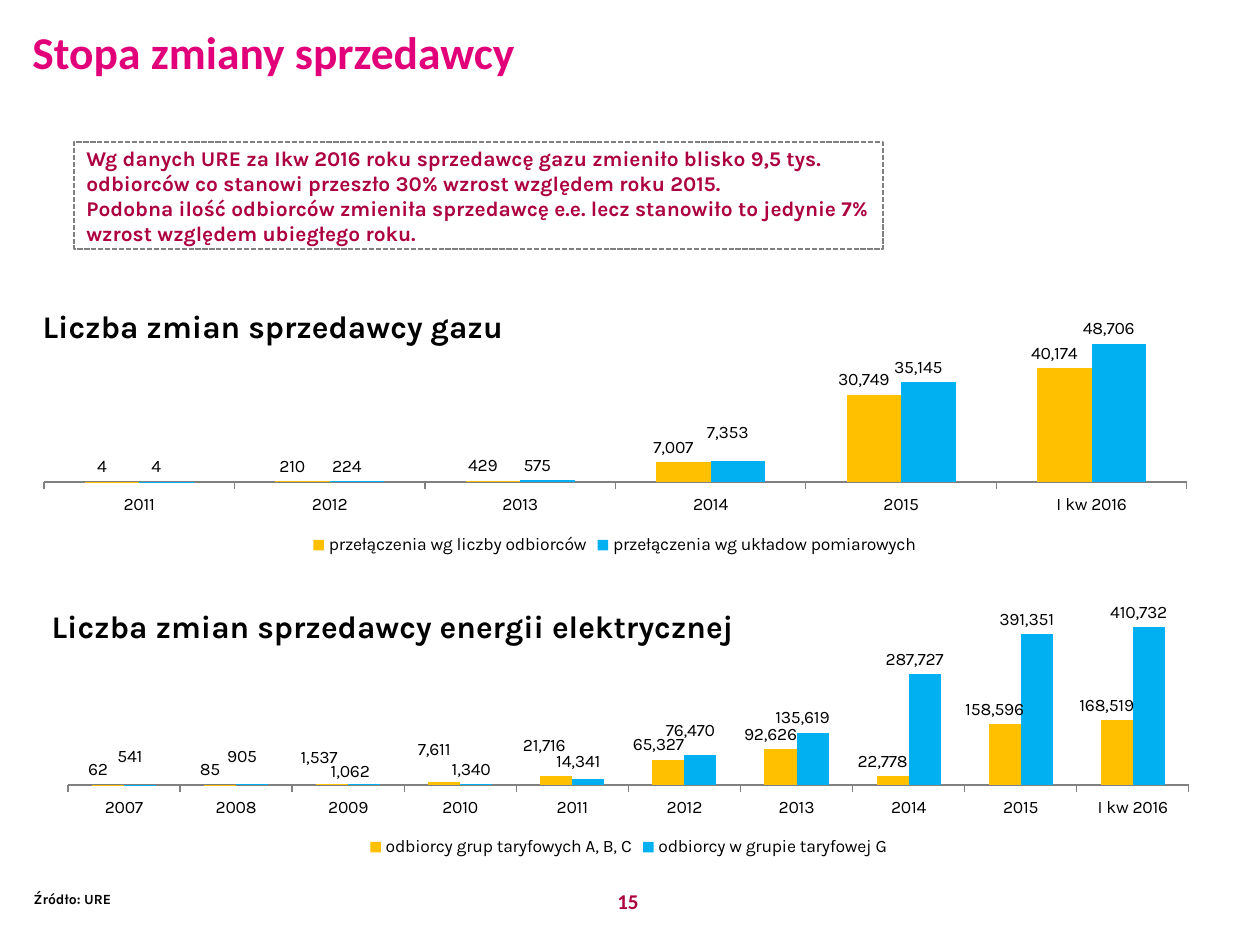
from copy import deepcopy

from lxml import etree
from pptx import Presentation
from pptx.chart.data import CategoryChartData
from pptx.dml.color import RGBColor
from pptx.enum.chart import (XL_CHART_TYPE, XL_LABEL_POSITION,
                             XL_LEGEND_POSITION, XL_TICK_MARK)
from pptx.enum.dml import MSO_LINE
from pptx.enum.shapes import MSO_SHAPE
from pptx.enum.text import MSO_ANCHOR, PP_ALIGN
from pptx.oxml.ns import qn
from pptx.util import Pt

COLUMNS = XL_CHART_TYPE.COLUMN_CLUSTERED
OUT_END = XL_LABEL_POSITION.OUTSIDE_END
BOTTOM = XL_LEGEND_POSITION.BOTTOM
TICK_OUT, TICK_NONE = XL_TICK_MARK.OUTSIDE, XL_TICK_MARK.NONE
DASH = MSO_LINE.SQUARE_DOT
RECT, ROUND = MSO_SHAPE.RECTANGLE, MSO_SHAPE.ROUNDED_RECTANGLE
MIDDLE = MSO_ANCHOR.MIDDLE
LEFT, CENTER = PP_ALIGN.LEFT, PP_ALIGN.CENTER
SCALE = 914400 / 126
NUMBER = (r'_-* #,##0\ _z_ł_-;\-* #,##0\ _z_ł_-;'
          r'_-* "-"??\ _z_ł_-;_-@_-')


class Theme:
    pink = RGBColor(0xE2, 0x00, 0x7A)
    wine = RGBColor(0xAD, 0x00, 0x40)
    black = RGBColor(0, 0, 0)
    gray = RGBColor(0x80, 0x80, 0x80)
    bars = RGBColor(0xFF, 0xC0, 0x00), RGBColor(0x00, 0xB0, 0xF0)
    head, body = "Calibri", "Karla"
    title, chart, note, label, small = 26, 18, 12, 10, 8


GAS = {
    "title": "Liczba zmian sprzedawcy gazu",
    "cats": ["2011", "2012", "2013", "2014", "2015", "I kw 2016"],
    "series": [
        ("przełączenia wg liczby odbiorców",
         [4, 210, 429, 7007, 30749, 40174]),
        ("przełączenia wg układow pomiarowych",
         [4, 224, 575, 7353, 35145, 48706])],
    "top": 50000,
    "plot": (24, 103, 1143, 142),
    "head": (17, 63),
    "shifts": [{}, {3: (0, -14)}],
}
POWER = {
    "title": "Liczba zmian sprzedawcy energii elektrycznej",
    "cats": [str(year) for year in range(2007, 2016)] + ["I kw 2016"],
    "series": [
        ("odbiorcy grup taryfowych A, B, C",
         [62, 85, 1537, 7611, 21716, 65327, 92626, 22778, 158596, 168519]),
        ("odbiorcy w grupie taryfowej G",
         [541, 905, 1062, 1340, 14341, 76470, 135619, 287727, 391351,
          410732])],
    "top": 450000,
    "plot": (23, 75, 1121, 173),
    "head": (1, 63),
    "shifts": [{2: (-3, -12), 3: (0, -18), 4: (-2, -16)},
               {0: (0, -13), 1: (0, -13), 2: (-4, 2), 3: (5, 0),
                4: (0, -3), 5: (0, -10)}],
}


def px(*sizes):
    return [round(size * SCALE) for size in sizes]


def style(font, face, size, color, bold=False):
    font.name, font.size, font.bold = face, Pt(size), bold
    font.color.rgb = color


def write(shape, lines, face, size, color, bold=True, align=LEFT):
    frame = shape.text_frame
    frame.word_wrap, frame.vertical_anchor = True, MIDDLE
    for i, line in enumerate(lines):
        para = frame.paragraphs[0] if i == 0 else frame.add_paragraph()
        para.alignment = align
        run = para.add_run()
        run.text = line
        style(run.font, face, size, color, bold)


def label(slide, box, text, face, size, color, align=LEFT):
    shape = slide.shapes.add_textbox(*px(*box))
    write(shape, [text], face, size, color, align=align)


def panel(slide, box, kind, lines, size, color, dashed=False):
    shape = slide.shapes.add_shape(kind, *px(*box))
    shape.shadow.inherit = False
    shape.fill.background()
    if dashed:
        shape.line.color.rgb = Theme.gray
        shape.line.width, shape.line.dash_style = Pt(1), DASH
    else:
        shape.line.fill.background()
    write(shape, lines, Theme.body, size, color)


def layout(box, spot, edge=True, inner=False):
    """Return a c:layout whose px values are shares of the chart box."""
    node = etree.Element(qn("c:layout"))
    manual = etree.SubElement(node, qn("c:manualLayout"))
    parts = [("layoutTarget", "inner")] if inner else []
    if edge:
        parts += [("xMode", "edge"), ("yMode", "edge")]
    sides = (box[2], box[3]) * 2
    parts += [(key, str(round(val / side, 4)))
              for key, val, side in zip("xywh", spot, sides)]
    for key, val in parts:
        etree.SubElement(manual, qn("c:" + key)).set("val", val)
    return node


def place(parent, node, index):
    """Put the layout in at index, in place of any earlier one."""
    for old in parent.findall(qn("c:layout")):
        parent.remove(old)
    parent.insert(index, node)


def dress(series, color, shifts, box):
    """Colour one series and label it, moving the crowded labels."""
    series.format.fill.solid()
    series.format.fill.fore_color.rgb = color
    series.invert_if_negative = False
    marks = series.data_labels
    marks.show_value, marks.position = True, OUT_END
    marks.number_format, marks.number_format_is_linked = NUMBER, False
    style(marks.font, Theme.body, Theme.label, Theme.black)
    for leader in marks._element.findall(qn("c:showLeaderLines")):
        leader.set("val", "0")
    form = marks._element.find(qn("c:numFmt"))
    for i, shift in shifts.items():
        mark = series.points[i].data_label
        style(mark.font, Theme.body, Theme.label, Theme.black)
        mark.position = OUT_END
        node = marks._element.findall(qn("c:dLbl"))[-1]
        place(node, layout(box, shift, edge=False), 1)
        node.insert(2, deepcopy(form))


def columns(slide, box, info):
    data = CategoryChartData(number_format=NUMBER)
    data.categories = info["cats"]
    for name, vals in info["series"]:
        data.add_series(name, vals)
    chart = slide.shapes.add_chart(COLUMNS, *px(*box), data).chart
    style(chart.font, Theme.body, Theme.label, Theme.black)

    chart.has_title = True
    run = chart.chart_title.text_frame.paragraphs[0].add_run()
    run.text = info["title"]
    style(run.font, Theme.body, Theme.chart, Theme.black, True)
    title = chart.chart_title._element
    place(title, layout(box, info["head"]), 1)
    title.find(qn("c:overlay")).set("val", "1")

    chart.has_legend = True
    chart.legend.position = BOTTOM
    chart.legend.include_in_layout = False

    axis = chart.value_axis
    axis.minimum_scale, axis.maximum_scale = 0, info["top"]
    axis.has_major_gridlines = axis.visible = False
    axis = chart.category_axis
    axis.major_tick_mark, axis.minor_tick_mark = TICK_OUT, TICK_NONE
    axis.format.line.color.rgb = Theme.gray

    plot = chart.plots[0]
    plot.gap_width, plot.overlap, plot.vary_by_categories = 150, 0, False
    area = plot._element.getparent()
    place(area, layout(box, info["plot"], inner=True), 0)
    for series, color, shifts in zip(plot.series, Theme.bars,
                                     info["shifts"]):
        dress(series, color, shifts, box)


def main():
    deck = Presentation()
    deck.slide_width, deck.slide_height = px(1260, 945)
    slide = deck.slides.add_slide(deck.slide_layouts[6])
    label(slide, (481, 876, 294, 50), "15", Theme.head, Theme.note,
          Theme.wine, CENTER)
    label(slide, (20, 22, 798, 59), "Stopa zmiany sprzedawcy", Theme.head,
          Theme.title, Theme.pink)
    panel(slide, (20, 884, 670, 29), ROUND, ["Źródło: URE"], Theme.small,
          Theme.black)
    columns(slide, (20, 237, 1189, 323), GAS)
    columns(slide, (45, 537, 1167, 325), POWER)
    panel(slide, (74, 142, 809, 107), RECT, [
        "Wg danych URE za Ikw 2016 roku sprzedawcę gazu zmieniło blisko "
        "9,5 tys. odbiorców co stanowi przeszło 30% wzrost względem roku "
        "2015.",
        "Podobna ilość odbiorców zmieniła sprzedawcę e.e. lecz stanowiło "
        "to jedynie 7% wzrost względem ubiegłego roku.",
    ], Theme.note, Theme.wine, dashed=True)
    deck.save("out.pptx")


if __name__ == "__main__":
    main()
